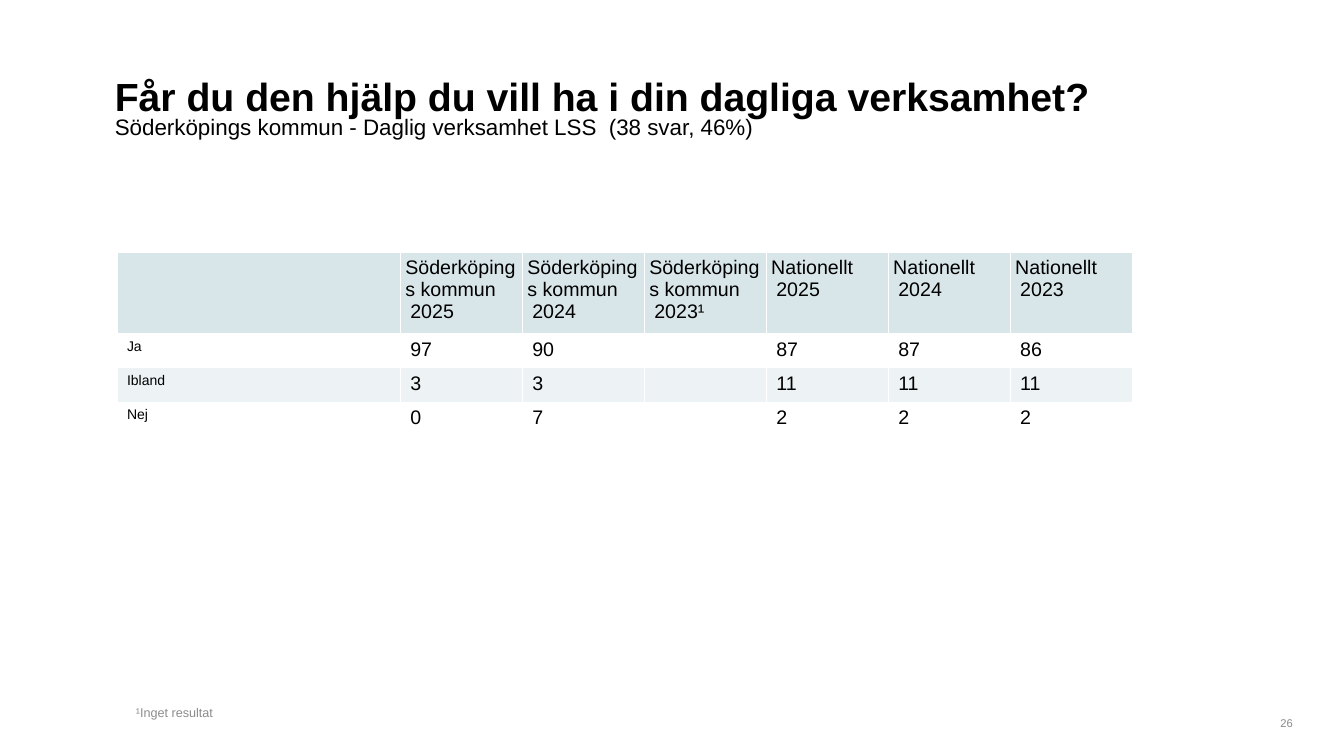
from dataclasses import dataclass

from lxml import etree
from pptx import Presentation
from pptx.dml.color import RGBColor
from pptx.enum.text import MSO_ANCHOR, PP_ALIGN
from pptx.oxml.ns import qn
from pptx.util import Inches, Pt

TOP, BOTTOM = MSO_ANCHOR.TOP, MSO_ANCHOR.BOTTOM
LEFT, RIGHT = PP_ALIGN.LEFT, PP_ALIGN.RIGHT
FONT = "Arial"
HEX = {
    "ink": "000000", "note": "8C8C8C", "page": "898989",
    "head": "D9E6E9", "band": "EDF3F4", "line": "FFFFFF",
}
PAD = Inches(0.05)


@dataclass
class Label:
    text: str
    left: float
    top: float
    width: float
    height: float
    size: float
    color: str = "ink"
    bold: bool = False
    wrap: bool = True
    anchor: MSO_ANCHOR = TOP
    align: PP_ALIGN = LEFT
    inset: float = 0.05


LABELS = [
    Label("Får du den hjälp du vill ha i din dagliga verksamhet?",
          1.04, 0.62, 11.25, 0.42, 28, bold=True, wrap=False, inset=0.1),
    Label("Söderköpings kommun - Daglig verksamhet LSS  (38 svar, 46%)",
          1.04, 1.04, 11.25, 0.42, 16, inset=0.08),
    Label("¹Inget resultat", 1.25, 3.23, 7.6, 3.96, 9, "note", anchor=BOTTOM),
    Label("26", 12.5, 7.08, 0.42, 0.21, 8, "page", anchor=BOTTOM, align=RIGHT),
]

TOWN, LAND = "Söderköpings kommun", "Nationellt"
ROWS = [
    ["", *(f"{TOWN}\n{year}" for year in ("2025", "2024", "2023¹")),
     *(f"{LAND}\n{year}" for year in (2025, 2024, 2023))],
    ["Ja", "97", "90", "", "87", "87", "86"],
    ["Ibland", "3", "3", "", "11", "11", "11"],
    ["Nej", "0", "7", "", "2", "2", "2"],
]
FILLS = ["head", None, "band", None]
WIDTHS = [2.81] + [1.21] * 6
HEIGHTS = [0.81] + [0.34] * 3


def write(frame, text: str, *, size: float, color: str = "ink",
          bold: bool = False, align: PP_ALIGN = LEFT, indent: bool = False) -> None:
    lines = text.split("\n")
    for i, line in enumerate(lines):
        para = frame.paragraphs[0] if i == 0 else frame.add_paragraph()
        para.alignment = align
        if indent and i == len(lines) - 1:
            props = para._p.get_or_add_pPr()
            props.set("marL", str(PAD))
            props.set("indent", "0")
        if not line:
            end = etree.SubElement(para._p, qn("a:endParaRPr"))
            end.set("sz", str(int(size * 100)))
            continue
        run = para.add_run()
        run.text = line
        font = run.font
        font.name, font.size, font.bold = FONT, Pt(size), bold
        font.color.rgb = RGBColor.from_string(HEX[color])


def add_label(slide, item: Label) -> None:
    box = slide.shapes.add_textbox(
        Inches(item.left), Inches(item.top), Inches(item.width), Inches(item.height))
    frame = box.text_frame
    frame.word_wrap = item.wrap
    frame.vertical_anchor = item.anchor
    frame.margin_top = Inches(item.inset)
    write(frame, item.text, size=item.size, color=item.color,
          bold=item.bold, align=item.align)


def add_edges(cell) -> None:
    props = cell._tc.get_or_add_tcPr()
    for i, side in enumerate(("lnL", "lnR", "lnT", "lnB")):
        edge = etree.Element(qn(f"a:{side}"), w=str(Pt(1)))
        fill = etree.SubElement(edge, qn("a:solidFill"))
        etree.SubElement(fill, qn("a:srgbClr"), val=HEX["line"])
        props.insert(i, edge)


def add_grid(slide) -> None:
    table = slide.shapes.add_table(
        len(ROWS), len(WIDTHS), Inches(1.16), Inches(2.5),
        Inches(sum(WIDTHS)), Inches(sum(HEIGHTS))).table
    table.first_row = table.horz_banding = False
    for col, width in zip(table.columns, WIDTHS):
        col.width = Inches(width)
    for r, (texts, tint) in enumerate(zip(ROWS, FILLS)):
        table.rows[r].height = Inches(HEIGHTS[r])
        for c, text in enumerate(texts):
            cell = table.cell(r, c)
            cell.margin_left = cell.margin_right = PAD
            cell.margin_top = cell.margin_bottom = PAD
            if tint:
                cell.fill.solid()
                cell.fill.fore_color.rgb = RGBColor.from_string(HEX[tint])
            else:
                cell.fill.background()
            add_edges(cell)
            write(cell.text_frame, text, size=14 if c else 10, indent=True)


def main() -> None:
    deck = Presentation()
    deck.slide_width, deck.slide_height = Inches(13.33), Inches(7.5)
    slide = deck.slides.add_slide(deck.slide_layouts[6])
    for item in LABELS[:2]:
        add_label(slide, item)
    add_grid(slide)
    for item in LABELS[2:]:
        add_label(slide, item)
    deck.save("out.pptx")


if __name__ == "__main__":
    main()
